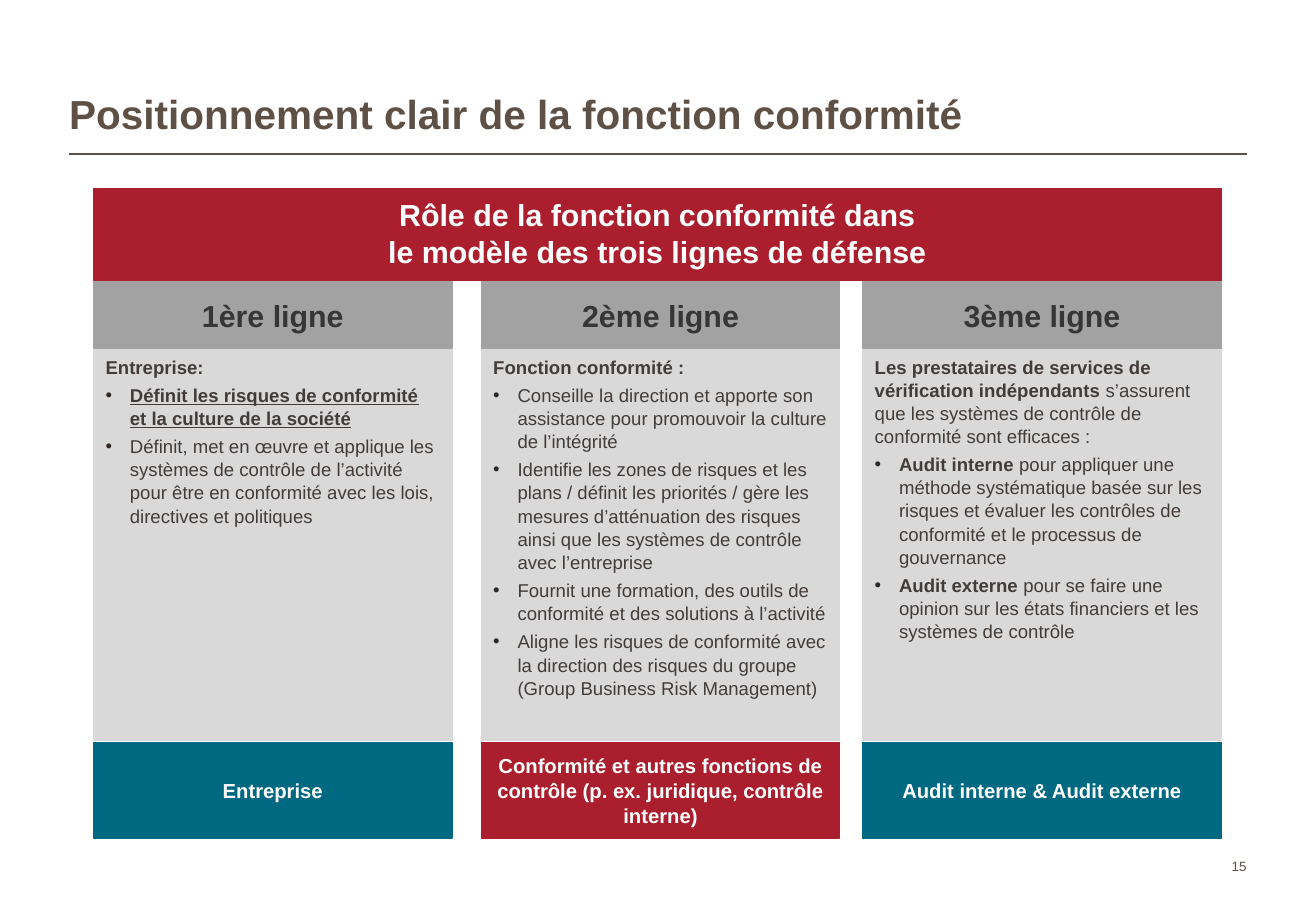
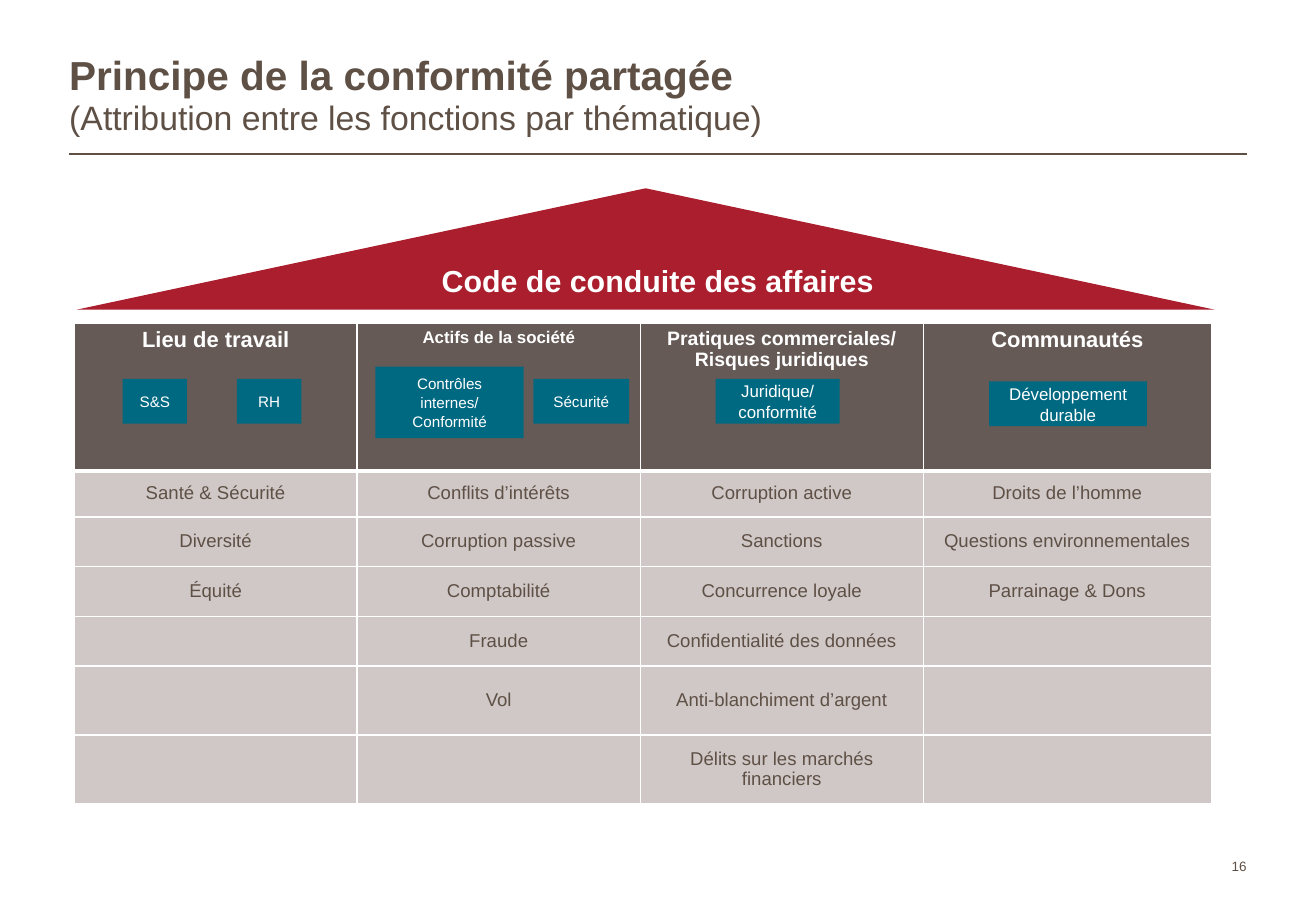
from copy import deepcopy

from lxml.etree import SubElement as Sub
from pptx import Presentation
from pptx.dml.color import RGBColor as Rgb
from pptx.enum.shapes import MSO_CONNECTOR as Link, MSO_SHAPE as Shape
from pptx.enum.text import MSO_ANCHOR as Anchor, MSO_AUTO_SIZE as Fit, PP_ALIGN as Align
from pptx.oxml.ns import qn
from pptx.util import Emu, Inches, Pt

FONT = "Arial"
BROWN = Rgb(0x5F, 0x50, 0x46)
INK = Rgb(0x43, 0x3C, 0x39)
DOT = Rgb(0x2F, 0x28, 0x23)
COAL = Rgb(0x36, 0x36, 0x36)
RED = Rgb(0xAA, 0x1E, 0x2D)
TEAL = Rgb(0x00, 0x69, 0x82)
SILVER = Rgb(0xA2, 0xA2, 0xA2)
PALE = Rgb(0xD9, 0xD9, 0xD9)
DARK = Rgb(0x65, 0x5A, 0x56)
ROSE = Rgb(0xCF, 0xC8, 0xC6)
WHITE = Rgb(0xFF, 0xFF, 0xFF)

PAGE = (0, 0, Inches(10.83), Inches(7.5))
HANG = Inches(0.2)
BOLD = {"bold": True}
STRONG = {"bold": True, "underline": True}

LINES = [
    ("1ère ligne", 0, TEAL, "Entreprise", [
        [("Entreprise:", BOLD)],
        [("Définit les risques de conformité et la culture de la société", STRONG)],
        "Définit, met en œuvre et applique les systèmes de contrôle de l’activité "
        "pour être en conformité avec les lois, directives et politiques",
    ]),
    ("2ème ligne", 34.38, RED,
     "Conformité et autres fonctions de contrôle (p. ex. juridique, contrôle interne)", [
         [("Fonction conformité :", BOLD)],
         "Conseille la direction et apporte son assistance pour promouvoir la culture "
         "de l’intégrité",
         "Identifie les zones de risques et les plans / définit les priorités / gère les "
         "mesures d’atténuation des risques ainsi que les systèmes de contrôle avec "
         "l’entreprise",
         "Fournit une formation, des outils de conformité et des solutions à l’activité",
         "Aligne les risques de conformité avec la direction des risques du groupe "
         "(Group Business Risk Management)",
     ]),
    ("3ème ligne", 68.21, TEAL, "Audit interne & Audit externe", [
        [("Les prestataires de services de vérification indépendants ", BOLD),
         ("s’assurent que les systèmes de contrôle de conformité sont efficaces :", {})],
        [("Audit interne ", BOLD),
         ("pour appliquer une méthode systématique basée sur les risques et évaluer les "
          "contrôles de conformité et le processus de gouvernance", {})],
        [("Audit externe ", BOLD),
         ("pour se faire une opinion sur les états financiers et les systèmes de "
          "contrôle", {})],
    ]),
]

COLS = [24.89, 24.89, 24.89, 25.32]
ROWS = [30.73, 9.57, 10.33, 10.33, 10.33, 14.36, 14.36]
HEADS = [
    (["Lieu de travail"], 13),
    (["Actifs de la société"], 10),
    (["Pratiques commerciales/", "Risques juridiques"], 11.5),
    (["Communautés"], 13),
]
TOPICS = [
    ["Santé & Sécurité", "Diversité", "Équité"],
    ["Conflits d’intérêts", "Corruption passive", "Comptabilité", "Fraude", "Vol"],
    ["Corruption active", "Sanctions", "Concurrence loyale", "Confidentialité des données",
     "Anti-blanchiment d’argent", "Délits sur les marchés financiers"],
    ["Droits de l’homme", "Questions environnementales", "Parrainage & Dons"],
]
CHIPS = [
    ("S&S", 9, (4.27, 11.59, 5.66, 9.32)),
    ("RH", 9, (14.32, 11.59, 5.66, 9.32)),
    ("Contrôles internes/\nConformité", 9, (26.5, 9.07, 13.03, 14.86)),
    ("Sécurité", 9, (40.38, 11.59, 8.44, 9.32)),
    ("Juridique/ conformité", 10, (56.41, 11.59, 10.9, 9.32)),
    ("Développement durable", 10, (80.45, 12.09, 13.89, 9.32)),
]


def part(box, x, y, w, h):
    """Return the area at the given percentages of a box."""
    left, top, wide, high = box
    return (Emu(round(left + wide * x / 100)), Emu(round(top + high * y / 100)),
            Emu(round(wide * w / 100)), Emu(round(high * h / 100)))


def write(frame, paras, size=11, color=WHITE, bold=False, align=Align.CENTER,
          anchor=None, inset=None, space=1.04, dots=False, shift=0):
    """Fill a text frame with paragraphs made of strings or of styled runs."""
    if anchor is not None:
        frame.word_wrap = True
        frame.auto_size = Fit.NONE
        frame.vertical_anchor = anchor
    if inset is not None:
        frame.margin_left = frame.margin_right = inset
        frame.margin_top = frame.margin_bottom = inset
    for num, runs in enumerate(paras):
        para = frame.add_paragraph() if num else frame.paragraphs[0]
        props = para._p.get_or_add_pPr()
        if shift:
            props.set("marL", str(shift))
            props.set("indent", "0")
        if dots and num:
            props.set("marL", str(HANG))
            props.set("indent", str(-HANG))
            Sub(Sub(props, qn("a:buClr")), qn("a:srgbClr"), val=str(DOT))
            Sub(props, qn("a:buFont"), typeface=FONT)
            Sub(props, qn("a:buChar"), char="•")
            para.space_before = Pt(3)
        para.alignment = align
        para.line_spacing = space
        for text, style in [(runs, {})] if isinstance(runs, str) else runs:
            for row, line in enumerate(text.split("\n")):
                if row:
                    para.add_line_break()
                    para._p[-1].insert(0, deepcopy(run._r.rPr))
                run = para.add_run()
                run.text = line
                font = run.font
                font.name, font.size, font.bold = FONT, Pt(size), bold
                font.color.rgb = color
                for key, value in style.items():
                    setattr(font, key, value)


def block(slide, box, fill, paras, kind=Shape.RECTANGLE, edge=True,
          anchor=Anchor.MIDDLE, **form):
    """Draw a filled shape with text."""
    shape = slide.shapes.add_shape(kind, *box)
    shape.shadow.inherit = False
    shape.fill.solid()
    shape.fill.fore_color.rgb = fill
    if edge:
        shape.line.color.rgb = fill
        shape.line.width = Pt(0.75)
    else:
        shape.line.fill.background()
    write(shape.text_frame, paras, anchor=anchor, **form)


def start(deck, title, page):
    """Add a slide with its title, rule and page number."""
    slide = deck.slides.add_slide(deck.slide_layouts[5])
    head = slide.shapes.title
    head.left, head.top, head.width, head.height = part(PAGE, 5.26, 2.8, 89.47, 12.4)
    write(head.text_frame, [title], size=24, color=BROWN, bold=True, align=Align.LEFT,
          anchor=Anchor.BOTTOM, inset=0, space=0.95)
    x, y, w, _ = part(PAGE, 5.26, 16.93, 89.47, 0)
    rule = slide.shapes.add_connector(Link.STRAIGHT, x, y, x + w, y)
    rule.line.color.rgb = BROWN
    rule.line.width = Pt(1)
    Sub(rule._element.spPr, qn("a:effectLst"))
    foot = slide.shapes.add_textbox(*part(PAGE, 90.4, 93.6, 4.34, 2.4))
    write(foot.text_frame, [page], size=8, color=BROWN, align=Align.RIGHT,
          anchor=Anchor.BOTTOM, inset=0, space=1)
    return slide


def model(slide, box):
    """Draw the three lines of defence under their banner."""
    for name, x, tint, owner, paras in LINES:
        col = part(box, x, 0, 31.79, 100)
        block(slide, part(col, 0, 24.67, 100, 60.37), PALE, paras, color=INK,
              align=Align.LEFT, anchor=Anchor.TOP, dots=True)
        block(slide, part(col, 0, 14.2, 100, 10.47), SILVER, [name], size=18,
              color=COAL, bold=True)
        block(slide, part(col, 0, 85.23, 100, 14.77), tint, [owner], size=12, bold=True)
    block(slide, part(box, 0, 0, 100, 14.2), RED,
          ["Rôle de la fonction conformité dans\nle modèle des trois lignes de défense"],
          size=18, bold=True, anchor=Anchor.TOP)


def paint(cell, fill, top, base):
    """Give a table cell its white borders and its fill."""
    props = cell._tc.get_or_add_tcPr()
    for side, width in zip("LRTB", (1, 1, top, base)):
        edge = Sub(props, qn("a:ln" + side), w=str(Pt(width)))
        Sub(Sub(edge, qn("a:solidFill")), qn("a:srgbClr"), val=str(WHITE))
    cell.fill.solid()
    cell.fill.fore_color.rgb = fill


def grid(slide, box):
    """Draw the table of topics and the chips that lie on its head row."""
    table = slide.shapes.add_table(len(ROWS), len(COLS), *box).table
    table.first_row = table.horz_banding = False
    for row, share in zip(table.rows, ROWS):
        row.height = Emu(round(box[3] * share / 100))
    for num, (share, (head, size), names) in enumerate(zip(COLS, HEADS, TOPICS)):
        table.columns[num].width = Emu(round(box[2] * share / 100))
        for row in range(len(ROWS)):
            cell = table.cell(row, num)
            paint(cell, ROSE if row else DARK, 3 if row == 1 else 1, 1 if row else 3)
            if row:
                cell.vertical_anchor = Anchor.MIDDLE
            if row == 0:
                write(cell.text_frame, head, size=size, bold=True, space=0.95)
            elif row <= len(names):
                write(cell.text_frame, [names[row - 1]], color=BROWN, space=0.95)
    for text, size, spot in CHIPS:
        block(slide, part(box, *spot), TEAL, [text], size=size, edge=False)


def house(slide, box):
    """Draw the roof and the table below it."""
    block(slide, part(box, 0.2, 0, 99.8, 19.72), RED, ["Code de conduite des affaires"],
          kind=Shape.ISOSCELES_TRIANGLE, edge=False, size=18, bold=True, shift=HANG)
    grid(slide, part(box, 0, 21.89, 99.68, 78.11))


def main():
    """Build and save the deck."""
    deck = Presentation()
    deck.slide_width, deck.slide_height = PAGE[2:]
    slide = start(deck, "Positionnement clair de la fonction conformité", "15")
    model(slide, part(PAGE, 7.11, 20.67, 85.69, 71.33))
    slide = start(deck, [
        ("Principe de la conformité partagée\n", {}),
        ("(Attribution entre les fonctions par thématique)",
         {"size": Pt(20), "bold": False}),
    ], "16")
    house(slide, part(PAGE, 5.63, 20.67, 86.7, 67.6))
    deck.save("out.pptx")


if __name__ == "__main__":
    main()
